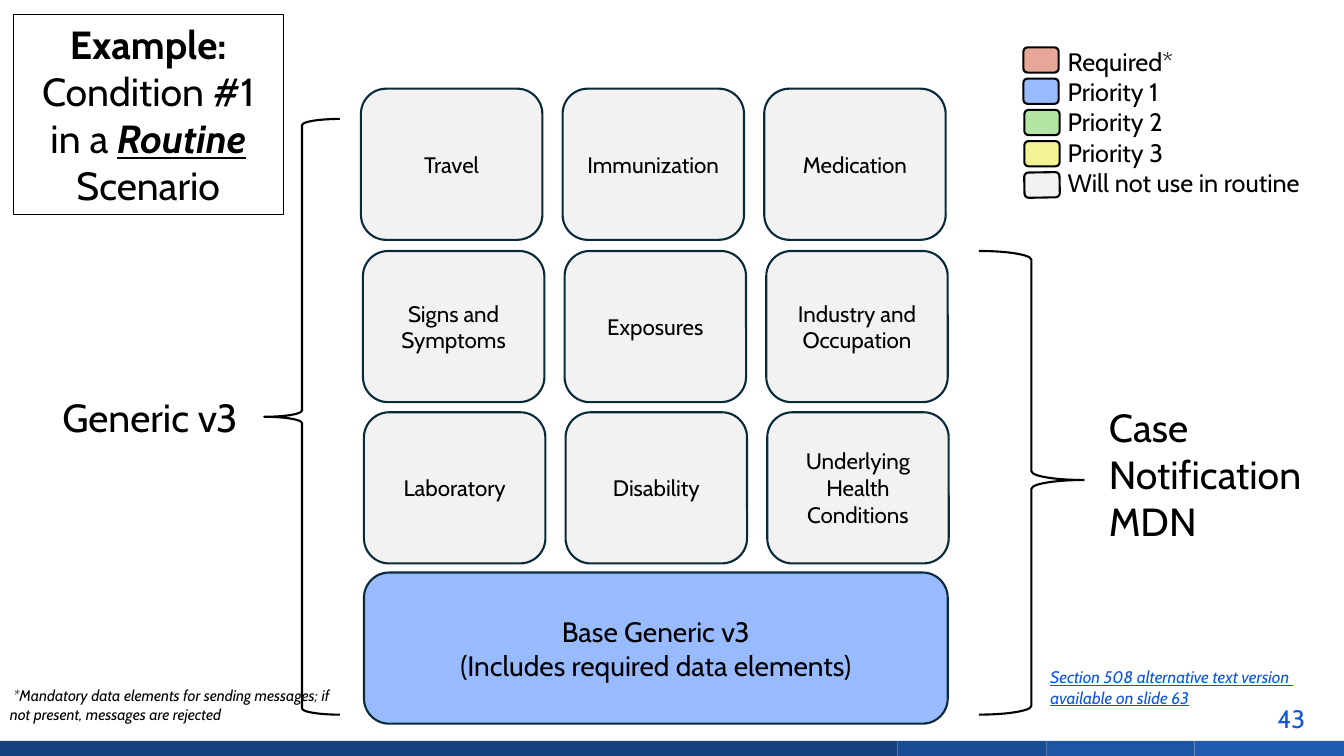
from pptx import Presentation
from pptx.dml.color import RGBColor
from pptx.enum.shapes import MSO_SHAPE
from pptx.enum.text import MSO_ANCHOR, PP_ALIGN
from pptx.util import Inches, Pt

BLACK = RGBColor(0x00, 0x00, 0x00)
NAVY = RGBColor(0x09, 0x2A, 0x39)
LINK_BLUE = RGBColor(0x0F, 0x56, 0xDC)
GRAY = RGBColor(0xF2, 0xF2, 0xF2)
BLUE = RGBColor(0x98, 0xBA, 0xFF)
GREEN = RGBColor(0xB4, 0xE5, 0xA2)
YELLOW = RGBColor(0xF1, 0xF3, 0x95)
RED = RGBColor(0xE6, 0xA7, 0x98)
FOOTER_BLUES = [
    RGBColor(0x16, 0x43, 0x80),
    RGBColor(0x19, 0x4D, 0x93),
    RGBColor(0x1C, 0x56, 0xA4),
    RGBColor(0x1E, 0x5D, 0xB2),
]

prs = Presentation()
prs.slide_width = Inches(13.33)
prs.slide_height = Inches(7.5)
slide = prs.slides.add_slide(prs.slide_layouts[6])


def add_outline(kind, box, fill=None, line=None, weight=1.5):
    """Add a shadowless preset shape; None leaves out its fill or its line."""
    shape = slide.shapes.add_shape(kind, *[Inches(v) for v in box])
    shape.shadow.inherit = False
    if fill is None:
        shape.fill.background()
    else:
        shape.fill.solid()
        shape.fill.fore_color.rgb = fill
    if line is None:
        shape.line.fill.background()
    else:
        shape.line.color.rgb = line
        shape.line.width = Pt(weight)
    return shape


def write(shape, paragraphs, size, color=BLACK, align=PP_ALIGN.LEFT, anchor=MSO_ANCHOR.TOP):
    """Fill a shape with paragraphs, each a list of (text, style letters) runs."""
    frame = shape.text_frame
    frame.word_wrap = True
    frame.vertical_anchor = anchor
    for i, runs in enumerate(paragraphs):
        paragraph = frame.paragraphs[0] if i == 0 else frame.add_paragraph()
        paragraph.alignment = align
        for text, style in runs:
            run = paragraph.add_run()
            run.text = text
            run.font.name = "Cabin"
            run.font.size = Pt(size)
            run.font.color.rgb = color
            run.font.bold = "b" in style
            run.font.italic = "i" in style
            run.font.underline = "u" in style


# Footer band
footer_edges = [0, 8.9, 10.38, 11.85, 13.33]
for left, right, shade in zip(footer_edges, footer_edges[1:], FOOTER_BLUES):
    add_outline(MSO_SHAPE.RECTANGLE, (left, 7.35, right - left, 0.15), shade)

# Title
title = add_outline(MSO_SHAPE.RECTANGLE, (0.13, 0.14, 2.68, 1.99), line=BLACK, weight=0.75)
title.text_frame.margin_left = title.text_frame.margin_right = Inches(0.15)
title_runs = [("Example: ", "b"), ("Condition #1 in a ", ""), ("Routine", "biu"), (" Scenario", "")]
write(title, [title_runs], 28, align=PP_ALIGN.CENTER, anchor=MSO_ANCHOR.MIDDLE)

# Module grid: left and top of each row, then its modules
module_rows = [
    (3.58, 0.88, ["Travel", "Immunization", "Medication"]),
    (3.6, 2.49, ["Signs and Symptoms", "Exposures", "Industry and Occupation"]),
    (3.61, 4.09, ["Laboratory", "Disability", "Underlying Health Conditions"]),
]
for row_left, top, modules in module_rows:
    for column, module in enumerate(modules):
        tile = add_outline(MSO_SHAPE.ROUNDED_RECTANGLE, (row_left + 2 * column, top, 1.8, 1.5), GRAY, NAVY)
        write(tile, [[(module, "")]], 16, align=PP_ALIGN.CENTER, anchor=MSO_ANCHOR.MIDDLE)

base = add_outline(MSO_SHAPE.ROUNDED_RECTANGLE, (3.61, 5.68, 5.79, 1.5), BLUE, NAVY)
base_lines = [[("Base Generic v3", "")], [("(Includes required data elements)", "")]]
write(base, base_lines, 20, align=PP_ALIGN.CENTER, anchor=MSO_ANCHOR.MIDDLE)

# Braces
add_outline(MSO_SHAPE.LEFT_BRACE, (2.62, 1.18, 0.75, 5.91), line=BLACK)
mdn_brace = add_outline(MSO_SHAPE.RIGHT_BRACE, (9.71, 2.49, 1.04, 4.6), line=BLACK)
mdn_brace.adjustments[1] = 0.494

# Legend swatches
legend = [
    ("Required*", RED, 10.15),
    ("Priority 1", BLUE, 10.15),
    ("Priority 2", GREEN, 10.16),
    ("Priority 3", YELLOW, 10.16),
    ("Will not use in routine", GRAY, 10.16),
]
for i, (label, color, left) in enumerate(legend):
    swatch = add_outline(MSO_SHAPE.ROUNDED_RECTANGLE, (left, 0.47 + 0.31 * i, 0.35, 0.25), color, BLACK)
swatch.rotation = 359

# Labels and notes
footnote = " *Mandatory data elements for sending messages; if not present, messages are rejected"
alternative = [[("Section 508 alternative text version ", "iu")], [("available on slide 63", "iu")]]
labels = [
    ((0.52, 3.85, 2.04, 0.57), [[("Generic v3", "")]], 28, BLACK),
    ((10.9, 3.95, 2.22, 1.51), [[("Case Notification MDN", "")]], 28, BLACK),
    ((10.49, 0.41, 2.8, 1.65), [[(label, "")] for label, _, _ in legend], 18, BLACK),
    ((0, 6.76, 3.38, 0.5), [[(footnote, "i")]], 11, BLACK),
    ((10.32, 6.57, 2.9, 0.5), alternative, 12, LINK_BLUE),
    ((12.57, 6.93, 0.54, 0.34), [[("43", "")]], 18, LINK_BLUE),
]
for box, paragraphs, size, color in labels:
    write(slide.shapes.add_textbox(*[Inches(v) for v in box]), paragraphs, size, color)

prs.save("out.pptx")
